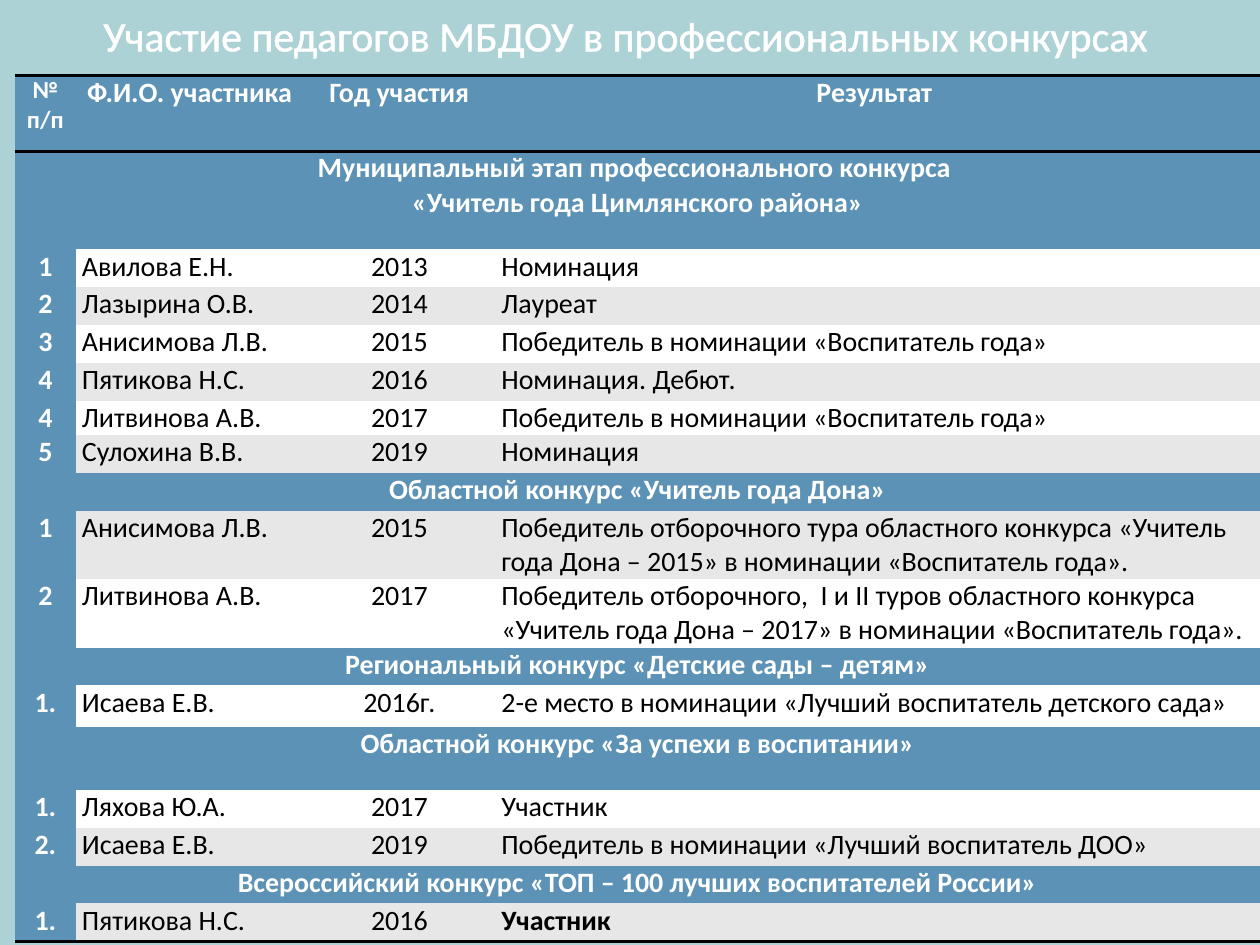
from lxml import etree
from pptx import Presentation
from pptx.dml.color import RGBColor
from pptx.enum.text import MSO_ANCHOR, PP_ALIGN
from pptx.oxml.ns import qn
from pptx.util import Inches, Pt

COLORS = {"background": "ACD2D5", "blue": "5C92B5", "white": "FFFFFF",
          "grey": "E7E7E7", "black": "000000"}
CENTER, LEFT = PP_ALIGN.CENTER, PP_ALIGN.LEFT


def write(frame, text, size=16, color="black", bold=False, align=LEFT):
    """Fill a text frame, one paragraph per line of text."""
    frame.text = text
    frame.word_wrap = True
    for paragraph in frame.paragraphs:
        paragraph.alignment = align
        for run in paragraph.runs:
            run.font.name = "Calibri"
            run.font.size = Pt(size)
            run.font.bold = bold
            run.font.color.rgb = RGBColor.from_string(COLORS[color])


def add_line(parent, tag, width, color=None):
    """Append a line element; without a colour it is invisible."""
    line = etree.SubElement(parent, qn(tag), w=str(Pt(width)))
    if color:
        fill = etree.SubElement(line, qn("a:solidFill"))
        etree.SubElement(fill, qn("a:srgbClr"), val=COLORS[color])
    else:
        etree.SubElement(line, qn("a:noFill"))
    return line


# Each row: height, then its cells; a single cell is a contest heading
rows = [
    (0.6, "№ п/п", "Ф.И.О. участника", "Год участия", "Результат "),
    (0.78, "Муниципальный этап профессионального конкурса \n«Учитель года Цимлянского района»"),
    (0.3, "1", "Авилова Е.Н.", "2013", "Номинация"),
    (0.3, "2", "Лазырина О.В.", "2014", "Лауреат"),
    (0.3, "3", "Анисимова Л.В.", "2015", "Победитель в номинации «Воспитатель года»"),
    (0.3, "4", "Пятикова Н.С.", "2016", "Номинация. Дебют."),
    (0.27, "4", "Литвинова А.В.", "2017", "Победитель в номинации «Воспитатель года»"),
    (0.3, "5", "Сулохина В.В.", "2019", "Номинация"),
    (0.3, "Областной конкурс «Учитель года Дона»"),
    (0.54, "1", "Анисимова Л.В.", "2015",
     "Победитель отборочного тура областного конкурса «Учитель года Дона – 2015» "
     "в номинации «Воспитатель года»."),
    (0.54, "2", "Литвинова А.В.", "2017",
     "Победитель отборочного,  I и II туров областного конкурса "
     "«Учитель года Дона – 2017» в номинации «Воспитатель года»."),
    (0.3, "Региональный конкурс «Детские сады – детям»"),
    (0.33, "1.", "Исаева Е.В.", "2016г.", "2-е место в номинации «Лучший воспитатель детского сада»"),
    (0.5, "Областной конкурс «За успехи в воспитании»"),
    (0.3, "1.", "Ляхова Ю.А.", "2017", "Участник"),
    (0.3, "2.", "Исаева Е.В.", "2019", "Победитель в номинации «Лучший воспитатель ДОО»"),
    (0.3, "Всероссийский конкурс «ТОП – 100 лучших воспитателей России»"),
    (0.3, "1.", "Пятикова Н.С.", "2016", "Участник"),
]
column_widths = [0.48, 1.81, 1.52, 6.07]
last = len(rows) - 1

prs = Presentation()
prs.slide_width, prs.slide_height = Inches(10), Inches(7.5)
slide = prs.slides.add_slide(prs.slide_layouts[5])
slide.background.fill.solid()
slide.background.fill.fore_color.rgb = RGBColor.from_string(COLORS["background"])

contests = slide.shapes.add_table(
    len(rows), len(column_widths), Inches(0.12), Inches(0.6),
    Inches(sum(column_widths)), Inches(sum(row[0] for row in rows))).table
contests.first_row = contests.horz_banding = False
for column, width in zip(contests.columns, column_widths):
    column.width = Inches(width)

for r, (height, *texts) in enumerate(rows):
    contests.rows[r].height = Inches(height)
    is_heading = len(texts) == 1
    if is_heading:
        contests.cell(r, 0).merge(contests.cell(r, len(column_widths) - 1))
    ruled = {"a:lnT": r in (0, 1), "a:lnB": r in (0, last)}
    for c in range(len(column_widths)):
        cell = contests.cell(r, c)
        cell.margin_left = cell.margin_right = Inches(0.05)
        cell.margin_top = cell.margin_bottom = 0
        for side in ("a:lnL", "a:lnR", "a:lnT", "a:lnB"):
            add_line(cell._tc.get_or_add_tcPr(), side, 2, "black" if ruled.get(side) else None)
        on_blue = r == 0 or c == 0 or is_heading
        band = "grey" if r % 2 else "white"
        cell.fill.solid()
        cell.fill.fore_color.rgb = RGBColor.from_string(COLORS["blue" if on_blue else band])
        if c < len(texts):
            write(cell.text_frame, texts[c],
                  size=14 if r == c == 0 else 16,
                  color="white" if on_blue else "black",
                  bold=on_blue or (r == last and c == 3),
                  align=CENTER if on_blue or c == 2 else LEFT)

title = slide.shapes.title
title.left, title.top = Inches(0.2), Inches(0)
title.width, title.height = Inches(9.53), Inches(0.55)
title.text_frame.vertical_anchor = MSO_ANCHOR.MIDDLE
write(title.text_frame, "Участие педагогов МБДОУ в профессиональных конкурсах",
      size=24, color="white", align=CENTER)
title_format = title.text_frame.paragraphs[0].runs[0]._r.get_or_add_rPr()
title_format.insert(0, add_line(title_format, "a:ln", 1.45, "white"))

prs.save("out.pptx")
